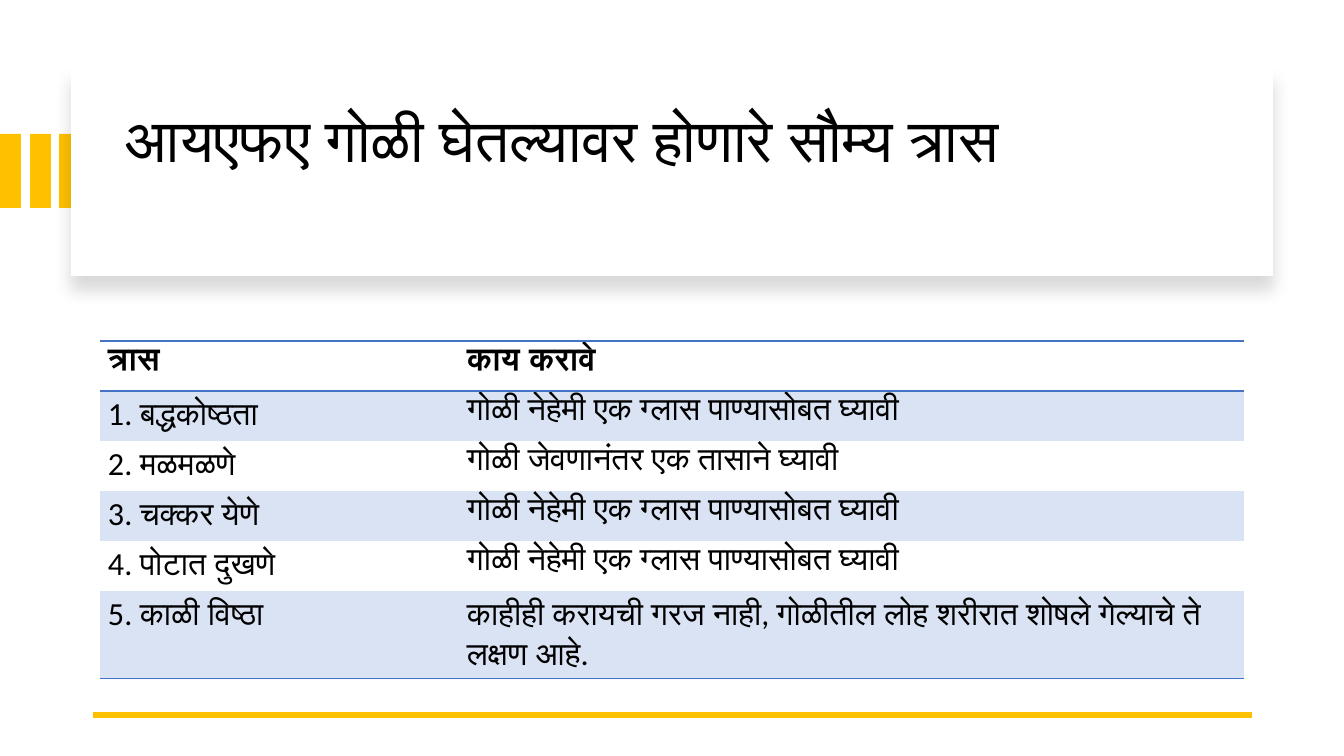
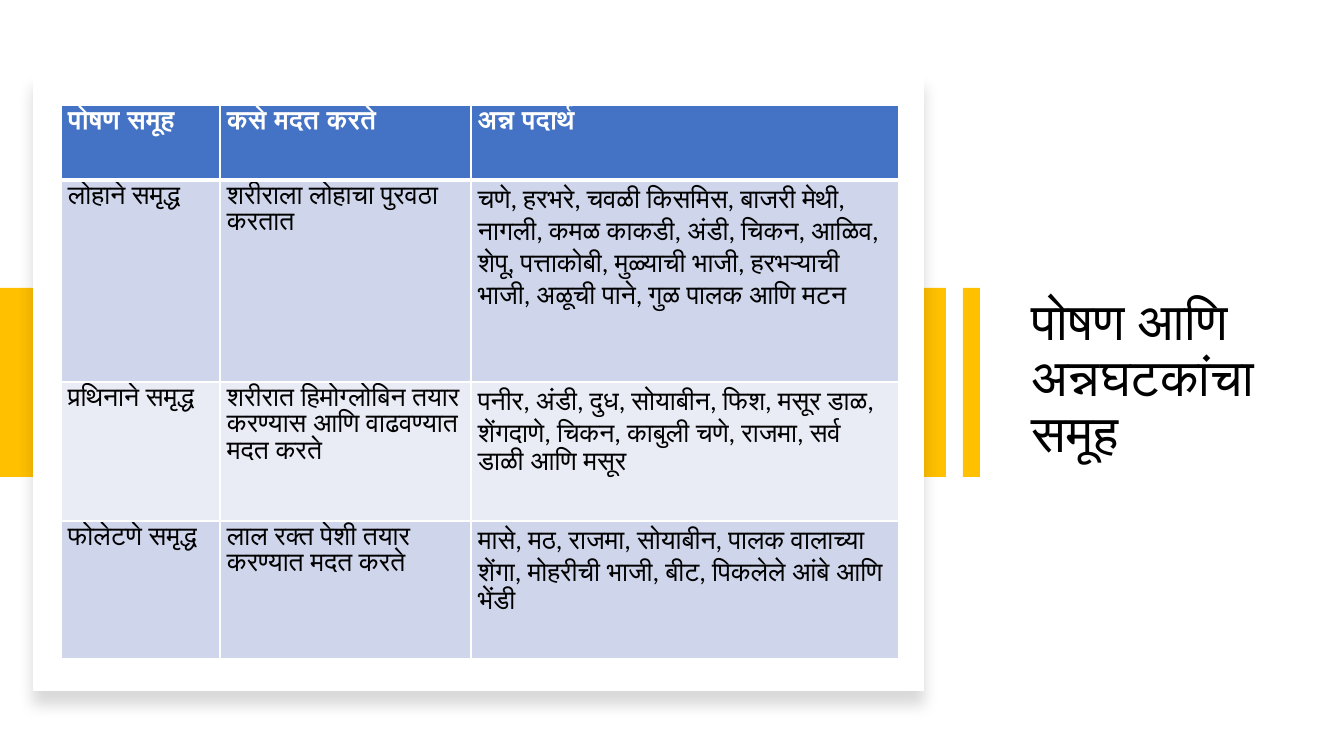
from lxml import etree
from pptx import Presentation
from pptx.dml.color import RGBColor
from pptx.enum.shapes import MSO_CONNECTOR, MSO_SHAPE
from pptx.enum.text import MSO_ANCHOR
from pptx.oxml.ns import qn
from pptx.util import Pt

PX = 9071
RECTANGLE = MSO_SHAPE.RECTANGLE
STRAIGHT = MSO_CONNECTOR.STRAIGHT
TOP, MIDDLE = MSO_ANCHOR.TOP, MSO_ANCHOR.MIDDLE
FONT = "Calibri"
GOLD, BLUE, WHITE, BLACK = "FFC000", "4472C4", "FFFFFF", "000000"
NO_GRID = "{2D5ABB26-0587-4C30-8999-92F81FD0307C}"
WITH_WATER = "गोळी नेहेमी एक ग्लास पाण्यासोबत घ्यावी"
WHITE_EDGES = {"lnL": 1, "lnR": 1, "lnB": 1}

PAGES = [
    {
        "title": "आयएफए गोळी घेतल्यावर होणारे सौम्य त्रास",
        "title_box": (115, 90, 1122, 171),
        "title_size": 43.2,
        "title_anchor": TOP,
        "title_inset": 20,
        "bars": [(left, 134, 21, 74) for left in (0, 30, 59)],
        "card": (71, 68, 1202, 208),
        "underline": (1252, 93, 715),
        "table_at": (100, 341),
        "columns": (359, 785),
        "rows": (50, 50, 50, 50, 50, 88),
        "inset": (8, 4),
        "size": 23,
        "header": (None, BLACK),
        "bands": ("DAE3F3", None),
        "edge_color": BLUE,
        "edges": ({"lnT": 1, "lnB": 1}, {}, {"lnB": 1}),
        "cells": [
            ("त्रास", "काय करावे"),
            ("1. बद्धकोष्ठता", WITH_WATER),
            ("2. मळमळणे", "गोळी जेवणानंतर एक तासाने घ्यावी"),
            ("3. चक्कर येणे", WITH_WATER),
            ("4. पोटात दुखणे", WITH_WATER),
            ("5. काळी विष्ठा",
             "काहीही करायची गरज नाही, गोळीतील लोह शरीरात शोषले गेल्याचे ते लक्षण आहे."),
        ],
    },
    {
        "title": "पोषण आणि\vअन्नघटकांचा\vसमूह",
        "title_box": (1022, 223, 272, 313),
        "title_size": 37,
        "title_anchor": MIDDLE,
        "title_inset": 5,
        "bars": [(0, 288, 946, 189), (963, 288, 17, 189)],
        "card": (33, 74, 891, 617),
        "underline": None,
        "table_at": (61, 105),
        "columns": (159, 251, 428),
        "rows": (75, 202, 139, 138),
        "inset": (7, 3),
        "size": 19,
        "header": (BLUE, WHITE),
        "bands": ("CFD5EA", "E9EBF5"),
        "edge_color": WHITE,
        "edges": ({"lnL": 1, "lnR": 1, "lnT": 1, "lnB": 3}, WHITE_EDGES, WHITE_EDGES),
        "cells": [
            ("पोषण समूह", "कसे मदत करते", "अन्न पदार्थ"),
            ("लोहाने समृद्ध", "शरीराला लोहाचा पुरवठा करतात",
             "चणे, हरभरे, चवळी किसमिस, बाजरी मेथी, नागली, कमळ काकडी, अंडी, चिकन, आळिव, "
             "शेपू, पत्ताकोबी, मुळ्याची भाजी, हरभऱ्याची भाजी, अळूची पाने, गुळ पालक आणि मटन"),
            ("प्रथिनाने समृद्ध", "शरीरात हिमोग्लोबिन तयार करण्यास आणि वाढवण्यात मदत करते",
             "पनीर, अंडी, दुध, सोयाबीन, फिश, मसूर डाळ, शेंगदाणे, चिकन, काबुली चणे, राजमा, "
             "सर्व डाळी आणि मसूर"),
            ("फोलेटणे समृद्ध", "लाल रक्त पेशी तयार करण्यात मदत करते",
             "मासे, मठ, राजमा, सोयाबीन, पालक वालाच्या शेंगा, मोहरीची भाजी, बीट, "
             "पिकलेले आंबे आणि भेंडी"),
        ],
    },
]


def add_rectangle(page, bounds, color):
    shape = page.shapes.add_shape(RECTANGLE, *[value * PX for value in bounds])
    shape.shadow.inherit = False
    shape.fill.solid()
    shape.fill.fore_color.rgb = RGBColor.from_string(color)
    shape.line.fill.background()
    return shape


def style_text(frame, size, color, bold=False):
    for para in frame.paragraphs:
        for span in para.runs:
            span.font.name = FONT
            span.font.size = Pt(size)
            span.font.bold = bold
            span.font.color.rgb = RGBColor.from_string(color)


deck = Presentation()
deck.slide_width, deck.slide_height = 1344 * PX, 756 * PX

for content in PAGES:
    page = deck.slides.add_slide(deck.slide_layouts[6])

    for bounds in content["bars"]:
        add_rectangle(page, bounds, GOLD)

    card = add_rectangle(page, content["card"], WHITE)
    effects = card._element.spPr.find(qn("a:effectLst"))
    shadow = etree.SubElement(effects, qn("a:outerShdw"), blurRad=str(Pt(11)),
                              dist=str(Pt(10)), dir="5400000", algn="t", rotWithShape="0")
    tint = etree.SubElement(shadow, qn("a:srgbClr"), val=BLACK)
    etree.SubElement(tint, qn("a:alpha"), val="15000")

    title = page.shapes.add_textbox(*[value * PX for value in content["title_box"]])
    frame = title.text_frame
    frame.word_wrap = True
    frame.vertical_anchor = content["title_anchor"]
    frame.margin_top = content["title_inset"] * PX
    frame.text = content["title"]
    frame.paragraphs[0].line_spacing = 0.9
    style_text(frame, content["title_size"], BLACK)

    if content["underline"]:
        start, end, height = [value * PX for value in content["underline"]]
        underline = page.shapes.add_connector(STRAIGHT, start, height, end, height)
        underline.line.color.rgb = RGBColor.from_string(GOLD)
        underline.line.width = Pt(4.5)
        etree.SubElement(underline._element.spPr, qn("a:effectLst"))

    left, top = content["table_at"]
    columns, rows = content["columns"], content["rows"]
    table = page.shapes.add_table(len(rows), len(columns), left * PX, top * PX,
                                  sum(columns) * PX, sum(rows) * PX).table
    table._tbl.tblPr.find(qn("a:tableStyleId")).text = NO_GRID
    for column, width in zip(table.columns, columns):
        column.width = width * PX
    for row, height in zip(table.rows, rows):
        row.height = height * PX

    header_edges, body_edges, last_edges = content["edges"]
    for index, texts in enumerate(content["cells"]):
        is_header = index == 0
        if is_header:
            edges = header_edges
            fill, color = content["header"]
        else:
            edges = last_edges if index == len(rows) - 1 else body_edges
            fill, color = content["bands"][(index - 1) % 2], BLACK
        for position, text in enumerate(texts):
            cell = table.cell(index, position)
            cell.text_frame.text = text
            style_text(cell.text_frame, content["size"], color, is_header)
            cell.margin_left = cell.margin_right = content["inset"][0] * PX
            cell.margin_top = cell.margin_bottom = content["inset"][1] * PX
            for edge, weight in edges.items():
                line = etree.SubElement(cell._tc.get_or_add_tcPr(), qn("a:" + edge),
                                        w=str(Pt(weight)))
                paint = etree.SubElement(line, qn("a:solidFill"))
                etree.SubElement(paint, qn("a:srgbClr"), val=content["edge_color"])
            if fill:
                cell.fill.solid()
                cell.fill.fore_color.rgb = RGBColor.from_string(fill)
            else:
                cell.fill.background()

deck.save("out.pptx")
